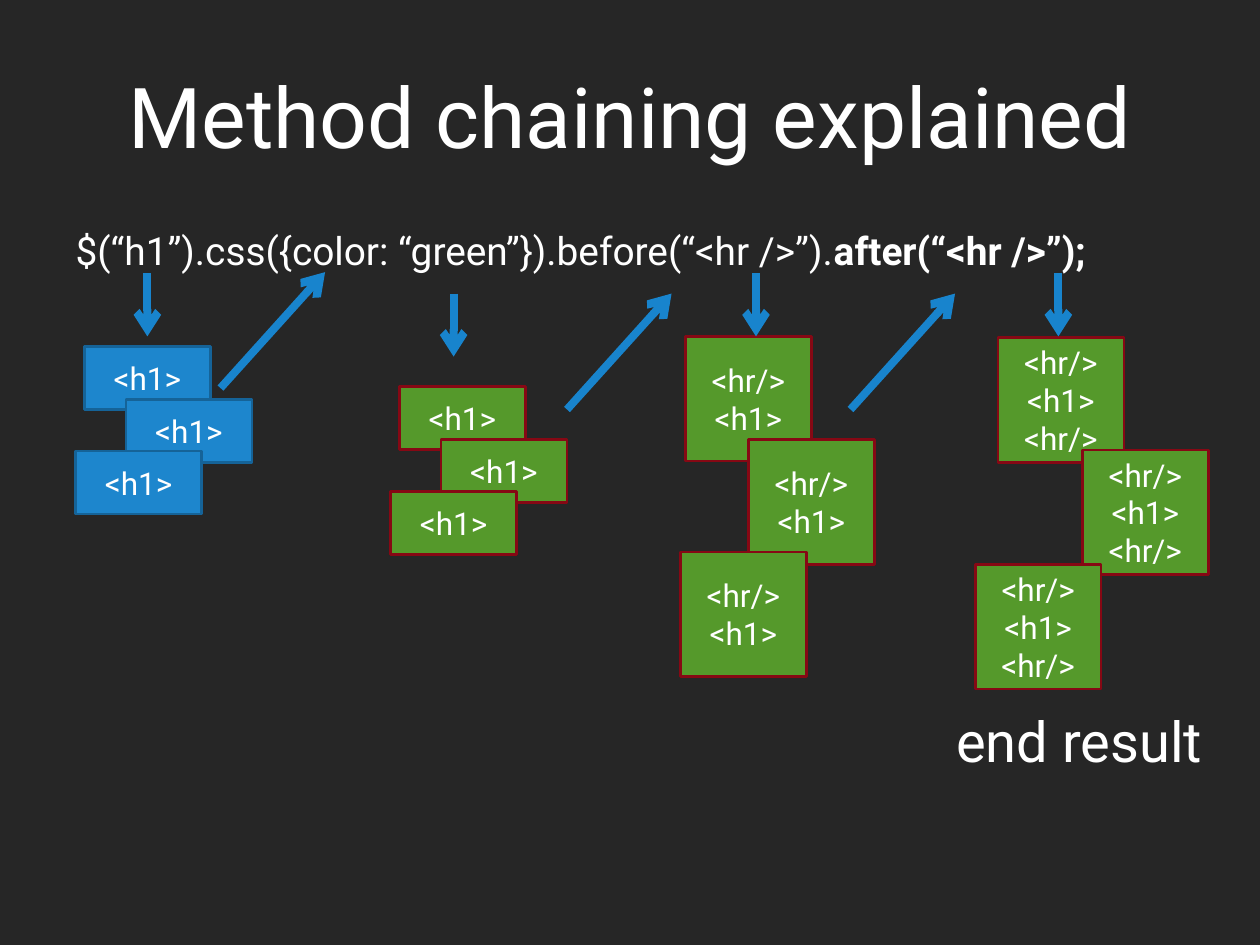
"""Build a slide that explains method chaining in four stages."""
from dataclasses import dataclass
from typing import Optional

import lxml.etree
import pptx
import pptx.dml.color
import pptx.enum.shapes
import pptx.enum.text
import pptx.oxml.ns
import pptx.util

Inches = pptx.util.Inches
Pt = pptx.util.Pt
RGBColor = pptx.dml.color.RGBColor
Align = pptx.enum.text.PP_ALIGN
Anchor = pptx.enum.text.MSO_ANCHOR
AutoSize = pptx.enum.text.MSO_AUTO_SIZE
qn = pptx.oxml.ns.qn

BACKGROUND = RGBColor(0x26, 0x26, 0x26)
WHITE = RGBColor(0xFF, 0xFF, 0xFF)
BLUE = RGBColor(0x1D, 0x86, 0xCD)
DARK_BLUE = RGBColor(0x15, 0x63, 0x98)
ARROW_BLUE = RGBColor(0x18, 0x84, 0xCD)
GREEN = RGBColor(0x55, 0x99, 0x2B)
DARK_RED = RGBColor(0x86, 0x08, 0x14)
FONT = "Roboto"
ELEMENT_WIDTH = 1
RETURN_ARROW = (0.83, -0.92)
CALL_ARROW = (0, 0.5)

Point = tuple[float, float]


@dataclass
class Stage:
    """One method call and the three elements it yields."""
    left: float
    top: float
    offsets: list[Point]
    height: float
    markup: list[str]
    call_start: Point
    return_start: Optional[Point] = None
    fill: RGBColor = GREEN
    border: RGBColor = DARK_RED


HEADING_OFFSETS = [(0, 0), (0.33, 0.42), (-0.07, 0.83)]
STAGES = [
    Stage(0.67, 2.75, HEADING_OFFSETS, 0.5, ["<h1>"],
          (1.17, 2.17), (1.75, 3.08), BLUE, DARK_BLUE),
    Stage(3.17, 3.07, HEADING_OFFSETS, 0.5, ["<h1>"],
          (3.6, 2.33), (4.5, 3.25)),
    Stage(5.44, 2.67, [(0, 0), (0.5, 0.82), (-0.04, 1.71)], 0.99, ["<hr/> <h1>"],
          (6, 2.17), (6.75, 3.25)),
    Stage(7.92, 2.68, [(0, 0), (0.67, 0.89), (-0.18, 1.8)], 0.99,
          ["<hr/> <h1>", "<hr/>"], (8.4, 2.17)),
]


def add_run(paragraph, text: str, size: float, bold: Optional[bool] = None) -> None:
    """Add one white run to a paragraph."""
    run = paragraph.add_run()
    run.text = text
    run.font.name = FONT
    run.font.size = Pt(size)
    run.font.bold = bold
    run.font.color.rgb = WHITE


def place(shape, left: float, top: float, width: float, height: float) -> None:
    """Move and size a placeholder."""
    shape.left, shape.top = Inches(left), Inches(top)
    shape.width, shape.height = Inches(width), Inches(height)


def add_element(slide, stage: Stage, offset: Point) -> None:
    """Draw one page element of a stage."""
    element = slide.shapes.add_shape(
        pptx.enum.shapes.MSO_SHAPE.RECTANGLE,
        Inches(stage.left + offset[0]), Inches(stage.top + offset[1]),
        Inches(ELEMENT_WIDTH), Inches(stage.height))
    element.shadow.inherit = False
    element.fill.solid()
    element.fill.fore_color.rgb = stage.fill
    element.line.color.rgb = stage.border
    element.line.width = Pt(1.5)
    frame = element.text_frame
    frame.word_wrap = True
    frame.vertical_anchor = Anchor.MIDDLE
    for index, markup in enumerate(stage.markup):
        paragraph = frame.add_paragraph() if index else frame.paragraphs[0]
        paragraph.alignment = Align.CENTER
        add_run(paragraph, markup, 18)


def add_arrow(slide, start: Point, reach: Point) -> None:
    """Draw a blue arrow from a start point across a reach."""
    arrow = slide.shapes.add_connector(
        pptx.enum.shapes.MSO_CONNECTOR.STRAIGHT,
        Inches(start[0]), Inches(start[1]),
        Inches(start[0] + reach[0]), Inches(start[1] + reach[1]))
    arrow.line.color.rgb = ARROW_BLUE
    arrow.line.width = Pt(4.5)
    outline = arrow.line._get_or_add_ln()
    lxml.etree.SubElement(outline, qn("a:tailEnd"), type="arrow")
    lxml.etree.SubElement(arrow._element.spPr, qn("a:effectLst"))


def add_stage(slide, stage: Stage) -> None:
    """Draw the elements and arrows of a stage."""
    for offset in stage.offsets:
        add_element(slide, stage, offset)
    add_arrow(slide, stage.call_start, CALL_ARROW)
    if stage.return_start:
        add_arrow(slide, stage.return_start, RETURN_ARROW)


def fill_title(title) -> None:
    """Write the slide title."""
    place(title, 0.75, 0.13, 8.5, 1.56)
    title.text_frame.auto_size = AutoSize.NONE
    title.text_frame.vertical_anchor = Anchor.MIDDLE
    heading = title.text_frame.paragraphs[0]
    heading.alignment = Align.CENTER
    add_run(heading, "Method chaining explained", 48)


def fill_chain(body) -> None:
    """Write the chained statement without a bullet."""
    place(body, 0.5, 1.75, 9.25, 0.67)
    body.text_frame.auto_size = AutoSize.NONE
    body.text_frame.vertical_anchor = Anchor.TOP
    statement = body.text_frame.paragraphs[0]
    statement.level = 1
    statement.alignment = Align.LEFT
    statement.space_before = Pt(0)
    properties = statement._p.get_or_add_pPr()
    properties.set("marL", "0")
    properties.set("indent", "0")
    lxml.etree.SubElement(properties, qn("a:buNone"))
    add_run(statement, "$(“h1”).css({color: “green”}).before(“<hr />”).", 22.2)
    add_run(statement, "after(“<hr />”);", 22.2, True)


def add_result_label(slide) -> None:
    """Label the last stage as the end result."""
    label = slide.shapes.add_textbox(
        Inches(7.49), Inches(5.56), Inches(2.25), Inches(0.64))
    label.text_frame.word_wrap = True
    label.text_frame.auto_size = AutoSize.SHAPE_TO_FIT_TEXT
    add_run(label.text_frame.paragraphs[0], "end result", 32)


def main() -> None:
    """Build and save the slide."""
    presentation = pptx.Presentation()
    presentation.slide_width = Inches(10)
    presentation.slide_height = Inches(7.5)
    slide = presentation.slides.add_slide(presentation.slide_layouts[1])
    slide.background.fill.solid()
    slide.background.fill.fore_color.rgb = BACKGROUND
    fill_title(slide.shapes.title)
    fill_chain(slide.placeholders[1])
    for stage in STAGES:
        add_stage(slide, stage)
    add_result_label(slide)
    presentation.save("out.pptx")


if __name__ == "__main__":
    main()
